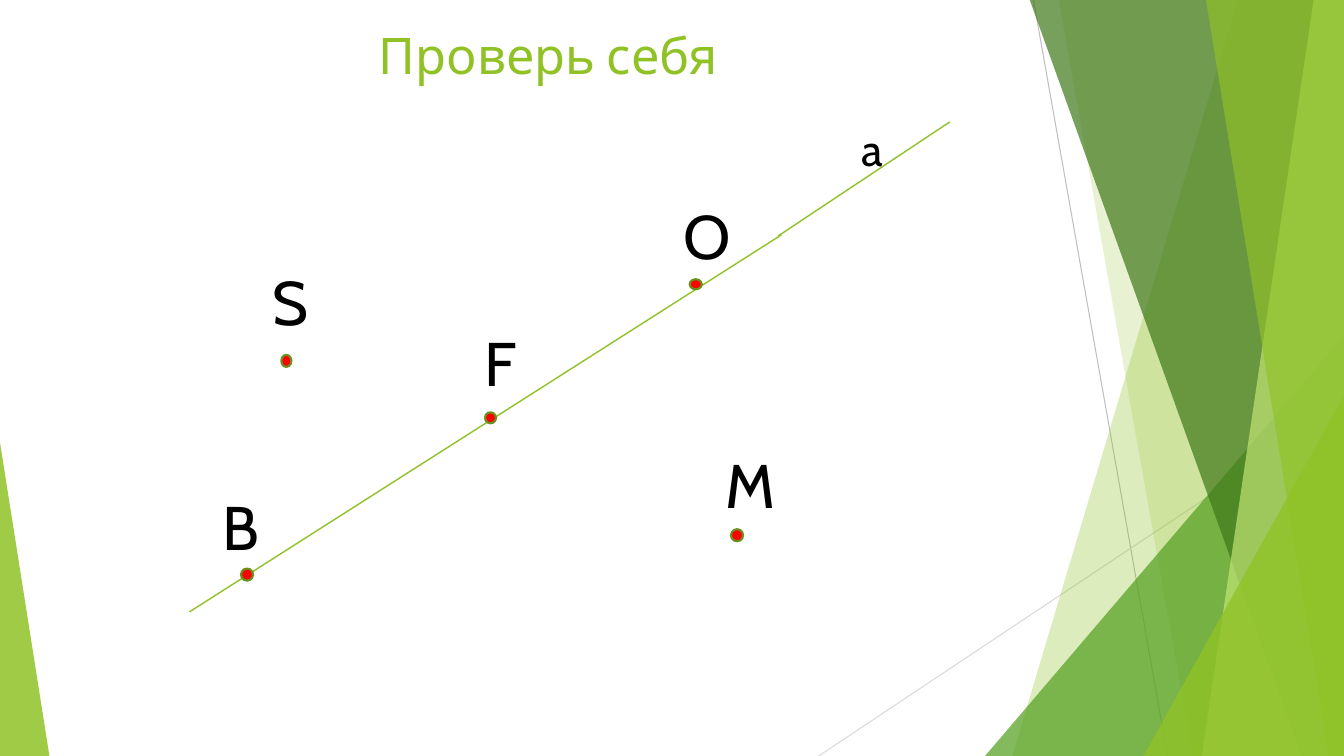
from pptx import Presentation
from pptx.dml.color import RGBColor
from pptx.enum.shapes import MSO_CONNECTOR, MSO_SHAPE
from pptx.enum.text import MSO_ANCHOR, MSO_AUTO_SIZE, PP_ALIGN
from pptx.oxml.ns import qn
from pptx.util import Emu, Pt
from lxml.etree import SubElement

PX = 9144  # EMU per px, 100 px to the inch
W, H = 1333, 750
FONT = "Cabin"

BLACK = RGBColor(0x00, 0x00, 0x00)
RED = RGBColor(0xFF, 0x00, 0x00)
GREEN = RGBColor(0x90, 0xC2, 0x26)
MID_GREEN = RGBColor(0x54, 0xA0, 0x21)
DARK_GREEN = RGBColor(0x3F, 0x78, 0x19)
PALE_GREEN = RGBColor(0xC0, 0xE4, 0x74)
DOT_EDGE = RGBColor(0x6B, 0x90, 0x1C)
GREY = RGBColor(0xBF, 0xBF, 0xBF)
LIGHT_GREY = RGBColor(0xD9, 0xD9, 0xD9)

# Bands between the slide's right edge and a slanted side: top x, bottom x, colour, opacity
BACK_BANDS = [(1228, 1004, GREEN, 30), (1050, 1183, GREEN, 20)]
FRONT_BANDS = [(1021, 1291, DARK_GREEN, 70), (1303, 1192, PALE_GREEN, 70),
               (1196, 1318, GREEN, 65)]

# Letter, left, top, width, height, size
LABELS = [("S", 260, 257, 58, 84, 44), ("B", 211, 480, 55, 84, 44),
          ("F", 471, 317, 43, 84, 44), ("M", 710, 438, 25, 84, 44),
          ("O", 668, 191, 43, 84, 44), ("a", 845, 116, 24, 64, 32)]

# Left, top, width, height of points S, M, O, F, B
DOTS = [(279, 352, 10, 12), (725, 525, 12, 12), (684, 277, 12, 10),
        (481, 409, 11, 11), (239, 564, 12, 12)]


def px(*values):
    return [Emu(v * PX) for v in values]


def paint(sp, color, opacity=100):
    sp.shadow.inherit = False
    sp.fill.solid()
    sp.fill.fore_color.rgb = color
    sp.line.fill.background()
    if opacity < 100:
        clr = sp._element.spPr.find(qn("a:solidFill"))[0]
        SubElement(clr, qn("a:alpha")).set("val", str(opacity * 1000))


def add_line(s, start, end, color, width):
    line = s.shapes.add_connector(MSO_CONNECTOR.STRAIGHT, *px(*start, *end))
    line.line.color.rgb = color
    line.line.width = Pt(width)
    SubElement(line._element.spPr, qn("a:effectLst"))


def add_band(s, top_x, bottom_x, color, opacity):
    fb = s.shapes.build_freeform(top_x, -1, scale=PX)
    fb.add_line_segments([(W, -1), (W, H), (bottom_x, H)], close=True)
    paint(fb.convert_to_shape(), color, opacity)


def add_triangle(s, box, apex, color, opacity):
    sp = s.shapes.add_shape(MSO_SHAPE.ISOSCELES_TRIANGLE, *px(*box))
    sp.adjustments[0] = apex
    paint(sp, color, opacity)


def add_dot(s, *box):
    sp = s.shapes.add_shape(MSO_SHAPE.OVAL, *px(*box))
    paint(sp, RED)
    sp.line.color.rgb = DOT_EDGE
    sp.line.width = Pt(1.5)


def add_run(p, text, size, color):
    r = p.add_run()
    r.text = text
    r.font.name = FONT
    r.font.size = Pt(size)
    r.font.color.rgb = color


def add_label(s, text, left, top, width, height, size):
    tf = s.shapes.add_textbox(*px(left, top, width, height)).text_frame
    tf.word_wrap = True
    tf.auto_size = MSO_AUTO_SIZE.SHAPE_TO_FIT_TEXT
    add_run(tf.paragraphs[0], text, size, BLACK)


def set_title(s, text):
    title = s.shapes.title
    title.left, title.top, title.width, title.height = px(74, 19, 940, 101)
    tf = title.text_frame
    tf.vertical_anchor = MSO_ANCHOR.TOP
    p = tf.paragraphs[0]
    p.alignment = PP_ALIGN.CENTER
    add_run(p, text, 36, GREEN)


def main():
    prs = Presentation()
    prs.slide_width, prs.slide_height = px(W, H)
    s = prs.slides.add_slide(prs.slide_layouts[5])

    # Decoration at the slide's edges
    add_line(s, (1025, 0), (1158, H), GREY, 0.75)
    add_line(s, (W, 403), (812, H), LIGHT_GREY, 0.75)
    for band in BACK_BANDS:
        add_band(s, *band)
    add_triangle(s, (977, 333, 356, 417), 1, MID_GREEN, 72)
    for band in FRONT_BANDS:
        add_band(s, *band)
    add_triangle(s, (1134, 393, 199, 357), 1, GREEN, 80)
    add_triangle(s, (0, 439, 49, 311), 0, GREEN, 85)

    # Title and letters
    set_title(s, "Проверь себя")
    for label in LABELS:
        add_label(s, *label)

    # Line a and the points
    add_line(s, (775, 233), (188, 607), GREEN, 1)
    for dot in DOTS:
        add_dot(s, *dot)
    add_line(s, (942, 121), (772, 234), GREEN, 1)

    prs.save("out.pptx")


if __name__ == "__main__":
    main()
